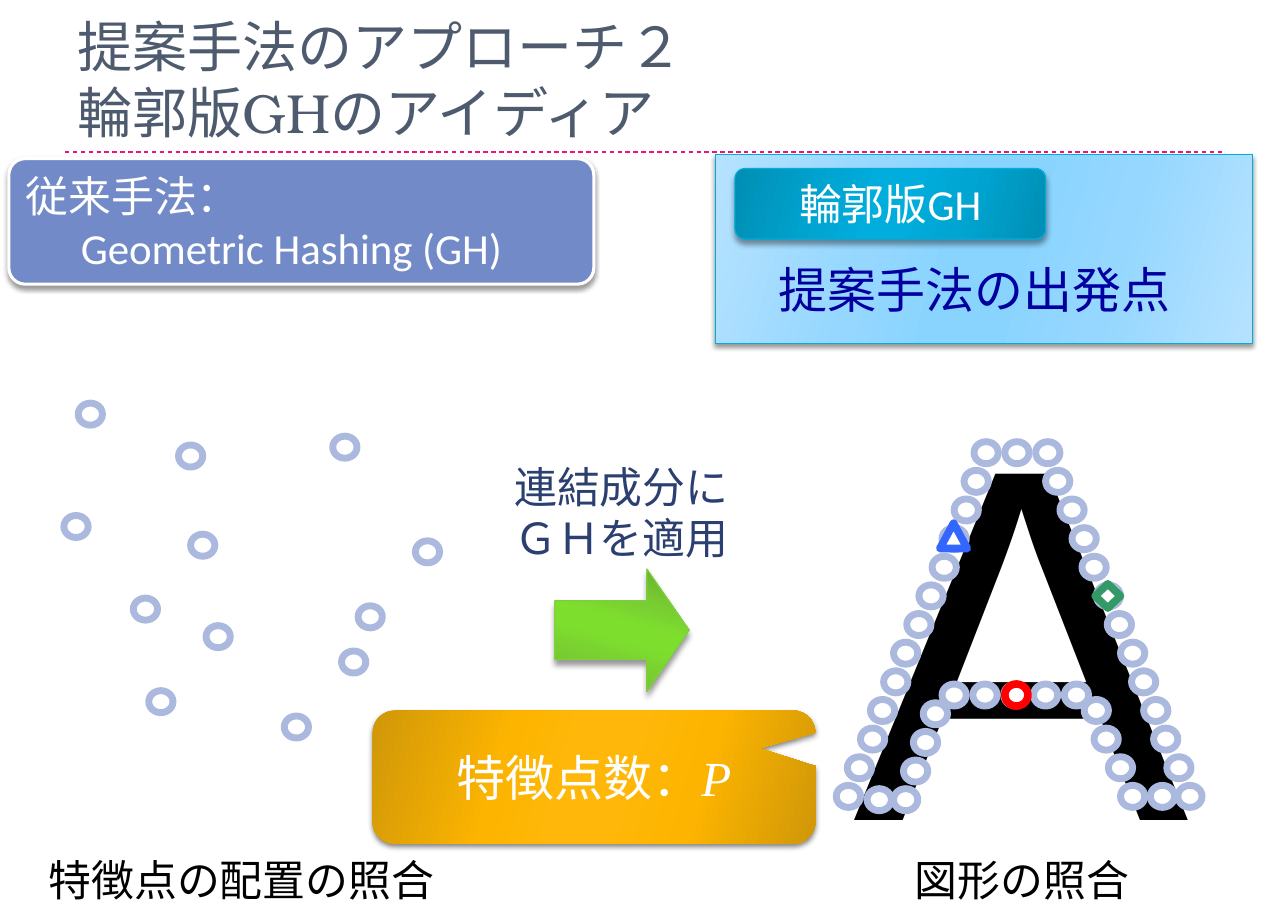
from dataclasses import dataclass
from typing import Optional

import lxml.etree
import pptx
import pptx.dml.color
import pptx.enum.dml
import pptx.enum.shapes
import pptx.enum.text
import pptx.oxml.ns
import pptx.util

COLORS = {
    "white": "FFFFFF", "black": "000000", "title": "4E5B6F", "rule": "EA157A",
    "ring": "ABB9DE", "blue": "3366FF", "green": "339966", "red": "FF0000",
    "conventional": "738AC8", "contour": "00ADDC", "arrow": "7FD13B",
    "starting_point": "0000A0", "apply": "2C3F71",
}
# Edge, shoulder and centre of each symmetric gradient
GRADIENTS = {
    "callout": ("D09708", "FCB400", "FFB809"),
    "arrow": ("68AB30", "79CF31", "7EDE2E"),
    "panel": ("B6E2FF", "95D7FF", "89D4FF"),
    "contour": ("008EB4", "00A5D2", "00ADDC"),
}
GRADIENT_STOPS = ((0, 0), (30, 1), (45, 2), (55, 2), (73, 1), (100, 0))

# The slide is a grid of 1169 columns by 827 rows, each 0.01 inch
CELL = pptx.util.Inches(0.01)
COLUMNS, ROWS = 1169, 827
RING_WIDTH, RING_HEIGHT, RING_PITCH = 22, 20, 26

SHAPES = pptx.enum.shapes.MSO_SHAPE
ALIGN = pptx.enum.text.PP_ALIGN
ANCHOR = pptx.enum.text.MSO_ANCHOR


@dataclass(frozen=True)
class Box:
    column: int
    row: int
    width: int
    height: int

    def lengths(self) -> tuple[int, int, int, int]:
        return self.column * CELL, self.row * CELL, self.width * CELL, self.height * CELL


@dataclass(frozen=True)
class Label:
    text: str
    size: int
    font: str
    color: str
    align: ALIGN = ALIGN.CENTER
    anchor: ANCHOR = ANCHOR.TOP
    wrap: bool = True
    insets: tuple[int, int] = (11, 6)


@dataclass(frozen=True)
class Shadow:
    alpha: int
    blur: float
    distance: float


@dataclass(frozen=True)
class Figure:
    kind: SHAPES
    box: Box
    fill: str = "white"
    gradient: Optional[str] = None
    line: Optional[str] = None
    line_width: float = 0.75
    adjustments: tuple[float, ...] = ()
    rotation: int = 0
    shadow: Optional[Shadow] = None
    label: Optional[Label] = None


def rgb(name: str) -> pptx.dml.color.RGBColor:
    return pptx.dml.color.RGBColor.from_string(COLORS[name])


def add_child(parent, tag: str, **attributes):
    return lxml.etree.SubElement(parent, pptx.oxml.ns.qn(tag), attributes)


def write_label(text_frame, label: Label) -> None:
    text_frame.text = label.text
    text_frame.auto_size = pptx.enum.text.MSO_AUTO_SIZE.NONE
    text_frame.word_wrap = label.wrap
    text_frame.vertical_anchor = label.anchor
    horizontal, vertical = label.insets
    text_frame.margin_left = text_frame.margin_right = horizontal * CELL
    text_frame.margin_top = text_frame.margin_bottom = vertical * CELL
    for paragraph in text_frame.paragraphs:
        paragraph.alignment = label.align
        for run in paragraph.runs:
            run.font.size = pptx.util.Pt(label.size)
            run.font.name = label.font
            run.font.color.rgb = rgb(label.color)


def paint_gradient(shape, name: str) -> None:
    shape.fill.gradient()
    shape.fill.gradient_angle = 344
    stop_list = shape.element.spPr.find(".//" + pptx.oxml.ns.qn("a:gsLst"))
    for stop in list(stop_list):
        stop_list.remove(stop)
    for position, shade in GRADIENT_STOPS:
        stop = add_child(stop_list, "a:gs", pos=str(position * 1000))
        add_child(stop, "a:srgbClr", val=GRADIENTS[name][shade])


def cast_shadow(shape, shadow: Shadow) -> None:
    effects = shape.element.spPr.find(pptx.oxml.ns.qn("a:effectLst"))
    outer = add_child(effects, "a:outerShdw", blurRad=str(pptx.util.Pt(shadow.blur)),
                      dist=str(pptx.util.Pt(shadow.distance)), dir="5400000", rotWithShape="0")
    color = add_child(outer, "a:srgbClr", val=COLORS["black"])
    add_child(color, "a:alpha", val=str(shadow.alpha * 1000))


def add_figure(slide, figure: Figure):
    shape = slide.shapes.add_shape(figure.kind, *figure.box.lengths())
    shape.shadow.inherit = False
    shape.rotation = figure.rotation
    for index, value in enumerate(figure.adjustments):
        shape.adjustments[index] = value
    if figure.gradient:
        paint_gradient(shape, figure.gradient)
    else:
        shape.fill.solid()
        shape.fill.fore_color.rgb = rgb(figure.fill)
    if figure.line:
        shape.line.color.rgb = rgb(figure.line)
        shape.line.width = pptx.util.Pt(figure.line_width)
    else:
        shape.line.fill.background()
    if figure.shadow:
        cast_shadow(shape, figure.shadow)
    if figure.label:
        write_label(shape.text_frame, figure.label)
    return shape


def add_text(slide, box: Box, label: Label) -> None:
    write_label(slide.shapes.add_textbox(*box.lengths()).text_frame, label)


def add_rings(slide, places: list[tuple[int, int]]) -> None:
    for column, row in places:
        box = Box(column, row, RING_WIDTH, RING_HEIGHT)
        add_figure(slide, Figure(SHAPES.OVAL, box, line="ring", line_width=4.5))


def add_title(slide) -> None:
    title = slide.shapes.title
    title.left, title.top, title.width, title.height = Box(59, 18, 1052, 119).lengths()
    write_label(title.text_frame, Label("提案手法のアプローチ２\v輪郭版GHのアイディア", 36, "TeX Gyre Bonum",
                                        "title", ALIGN.LEFT, ANCHOR.BOTTOM))
    rule = slide.shapes.add_connector(pptx.enum.shapes.MSO_CONNECTOR.STRAIGHT,
                                      59 * CELL, 138 * CELL, 1111 * CELL, 138 * CELL)
    rule.line.color.rgb = rgb("rule")
    rule.line.width = pptx.util.Pt(0.75)
    rule.line.dash_style = pptx.enum.dml.MSO_LINE.DASH
    add_child(rule.element.spPr, "a:effectLst")


def descend(columns: list[int], first_row: int) -> list[tuple[int, int]]:
    """Place one ring per pitch downwards from first_row."""
    return [(column, first_row + RING_PITCH * step) for step, column in enumerate(columns)]


LEFT_EDGE = [884, 875, 866, 855, 846, 834, 823, 811, 802, 790, 781, 769, 759]
RIGHT_EDGE = [940, 949, 962, 973, 982, 995, 1005, 1017, 1027, 1038, 1047, 1059, 1069]
CONTOUR = [
    *descend(LEFT_EDGE, 401), (912, 401), *descend(RIGHT_EDGE, 401),
    *descend([838, 829, 820, 811], 638), (787, 716),
    *((column, 621) for column in (855, 883, 911, 938, 966)),
    *descend([984, 993, 1006, 1017], 635), (1044, 713),
]
SCATTER = [(302, 396), (258, 650), (58, 468), (162, 404), (71, 366), (325, 550),
           (135, 627), (121, 543), (310, 591), (377, 491), (187, 568), (173, 485)]

MARKERS = [
    Figure(SHAPES.ISOSCELES_TRIANGLE, Box(853, 475, 25, 23), line="blue", line_width=5),
    Figure(SHAPES.DIAMOND, Box(994, 530, 23, 22), line="green", line_width=5),
    Figure(SHAPES.OVAL, Box(912, 621, 21, 20), line="red", line_width=5),
]
CALLOUT = Figure(SHAPES.ROUNDED_RECTANGULAR_CALLOUT, Box(338, 645, 402, 121), gradient="callout",
                 adjustments=(0.375, -0.216, 0.167), shadow=Shadow(50, 4, 2),
                 label=Label("特徴点数：", 32, "Calibri", "white", anchor=ANCHOR.MIDDLE))
PANELS = [
    Figure(SHAPES.UP_ARROW, Box(509, 511, 111, 122), gradient="arrow", line="arrow",
           adjustments=(0.478, 0.346), rotation=90, shadow=Shadow(40, 4, 3.4)),
    Figure(SHAPES.RECTANGLE, Box(649, 140, 488, 172), gradient="panel", line="contour",
           shadow=Shadow(40, 3, 2)),
    Figure(SHAPES.ROUNDED_RECTANGLE, Box(8, 144, 531, 114), fill="conventional", line="white",
           line_width=2, adjustments=(0.131,), shadow=Shadow(40, 3, 2),
           label=Label("従来手法：\n\tGeometric Hashing (GH)", 28, "Calibri", "white", ALIGN.LEFT)),
    Figure(SHAPES.ROUNDED_RECTANGLE, Box(667, 153, 282, 64), gradient="contour", line="contour",
           adjustments=(0.144,), shadow=Shadow(40, 4, 3.4),
           label=Label("輪郭版GH", 28, "Calibri", "white")),
]
CAPTIONS = [
    (Box(32, 770, 374, 57), Label("特徴点の配置の照合", 28, "Cabin", "black", wrap=False, insets=(10, 5))),
    (Box(819, 770, 217, 57), Label("図形の照合", 28, "Cabin", "black", wrap=False, insets=(10, 5))),
    (Box(696, 230, 440, 65), Label("提案手法の出発点", 32, "Times New Roman", "starting_point", ALIGN.LEFT)),
    (Box(452, 412, 224, 106), Label("連結成分に\nＧＨを適用", 28, "Cabin", "apply")),
]


def main() -> None:
    presentation = pptx.Presentation()
    presentation.slide_width, presentation.slide_height = COLUMNS * CELL, ROWS * CELL
    slide = presentation.slides.add_slide(presentation.slide_layouts.get_by_name("Title Only"))
    add_title(slide)
    add_text(slide, Box(764, 282, 331, 565), Label("A", 329, "Arial", "black", ALIGN.LEFT, wrap=False))
    add_rings(slide, CONTOUR)
    for marker in MARKERS:
        add_figure(slide, marker)
    callout = add_figure(slide, CALLOUT)
    variable = callout.text_frame.paragraphs[0].add_run()
    variable.text = "P"
    variable.font.size = pptx.util.Pt(32)
    variable.font.name = "Times New Roman"
    variable.font.italic = True
    variable.font.color.rgb = rgb("white")
    add_rings(slide, SCATTER)
    for panel in PANELS:
        add_figure(slide, panel)
    for box, label in CAPTIONS:
        add_text(slide, box, label)
    presentation.save("out.pptx")


if __name__ == "__main__":
    main()
